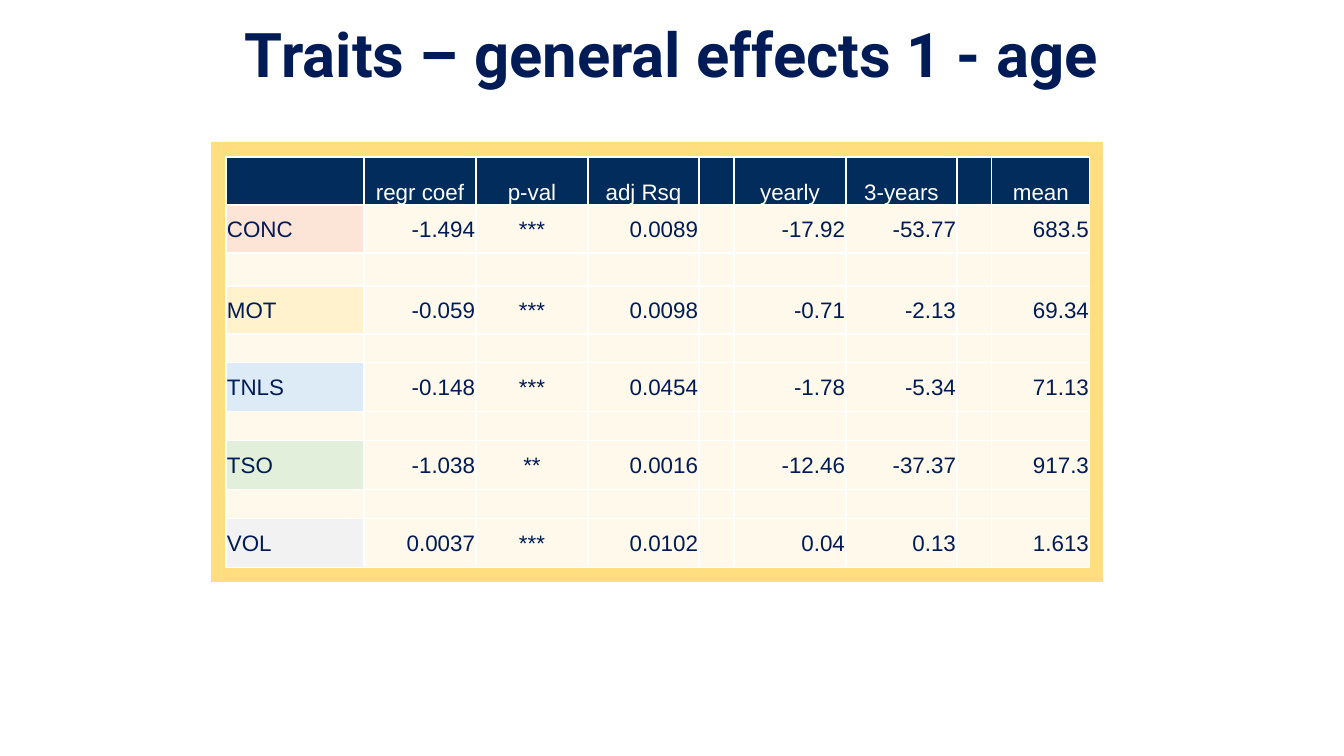
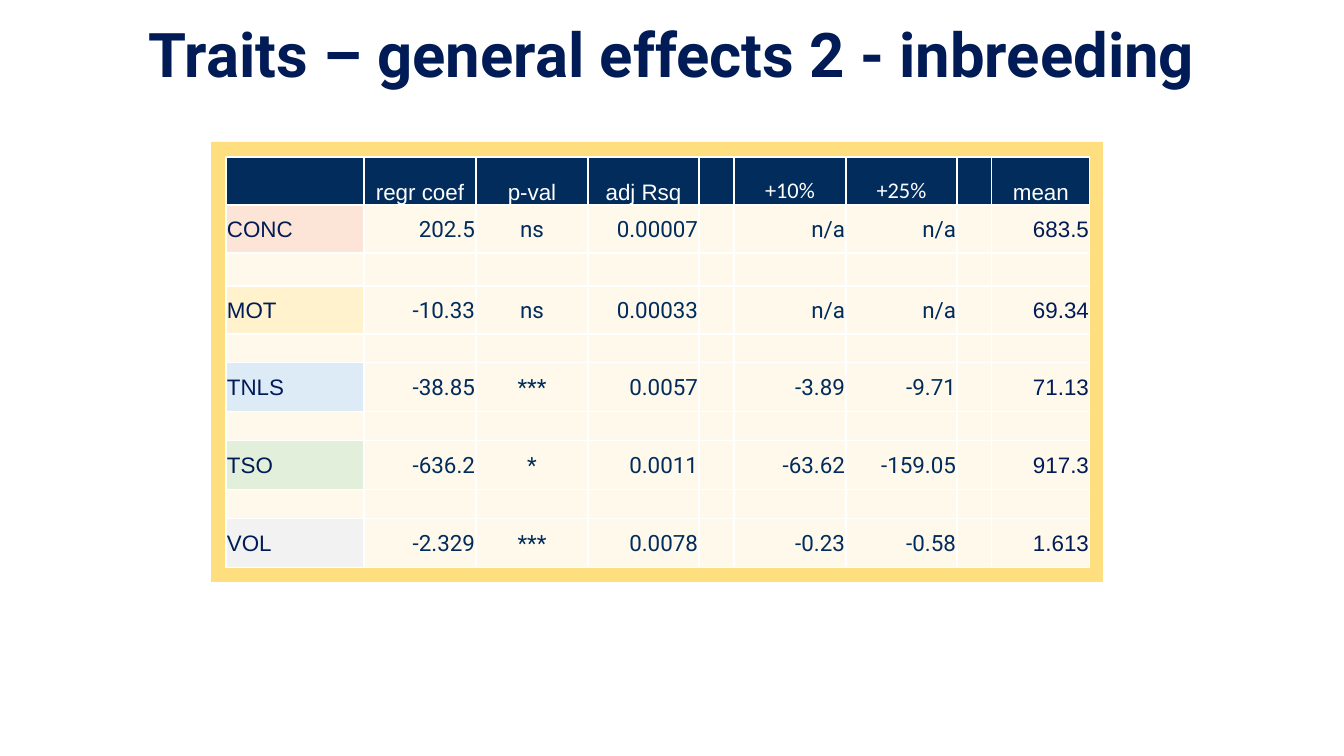
from lxml.etree import SubElement
from pptx import Presentation
from pptx.dml.color import RGBColor
from pptx.enum.shapes import MSO_SHAPE
from pptx.enum.text import MSO_ANCHOR, PP_ALIGN
from pptx.oxml.ns import qn
from pptx.util import Emu, Pt

WHITE = RGBColor(0xFE, 0xFF, 0xFE)
TITLE_NAVY = RGBColor(0x00, 0x1B, 0x56)
TEXT_NAVY = RGBColor(0x01, 0x1B, 0x56)
HEADER_NAVY = RGBColor(0x01, 0x2C, 0x5C)
YELLOW = RGBColor(0xFF, 0xDE, 0x7F)
CREAM = RGBColor(0xFF, 0xF9, 0xEC)
TRAIT_FILLS = {
    "CONC": RGBColor(0xFC, 0xE4, 0xD6),
    "MOT": RGBColor(0xFF, 0xF2, 0xCC),
    "TNLS": RGBColor(0xDD, 0xEB, 0xF7),
    "TSO": RGBColor(0xE2, 0xEF, 0xDA),
    "VOL": RGBColor(0xF2, 0xF2, 0xF2),
}
MEANS = ["683.5", "69.34", "71.13", "917.3", "1.613"]

COLUMN_WIDTHS = [138, 112, 112, 111, 35, 112, 111, 35, 98]
ROW_HEIGHTS = [48, 48, 33, 48, 29, 49, 29, 49, 29, 49]
P_VALUE_COLUMN = 2
EFFECT_COLUMNS = (5, 6)
MEAN_COLUMN = 8

AGE_EFFECTS = [
    ["-1.494", "***", "0.0089", "-17.92", "-53.77"],
    ["-0.059", "***", "0.0098", "-0.71", "-2.13"],
    ["-0.148", "***", "0.0454", "-1.78", "-5.34"],
    ["-1.038", "**", "0.0016", "-12.46", "-37.37"],
    ["0.0037", "***", "0.0102", "0.04", "0.13"],
]
INBREEDING_EFFECTS = [
    ["202.5", "ns", "0.00007", "n/a", "n/a"],
    ["-10.33", "ns", "0.00033", "n/a", "n/a"],
    ["-38.85", "***", "0.0057", "-3.89", "-9.71"],
    ["-636.2", "*", "0.0011", "-63.62", "-159.05"],
    ["-2.329", "***", "0.0078", "-0.23", "-0.58"],
]


def px(count):
    """Turn pixels into EMU."""
    return Emu(round(count * 914400 / 100.8))


def style_font(font, name, size, color, bold=False):
    """Set the look of a font."""
    font.name = name
    font.size = Pt(size)
    font.color.rgb = color
    font.bold = bold


def add_title(page, text):
    """Add the centred title across the top of the page."""
    box = page.shapes.add_textbox(px(0), px(0), px(1344), px(119))
    frame = box.text_frame
    frame.word_wrap = True
    frame.vertical_anchor = MSO_ANCHOR.MIDDLE
    frame.margin_left = frame.margin_right = frame.margin_top = frame.margin_bottom = 0
    frame.text = text
    para = frame.paragraphs[0]
    para.alignment = PP_ALIGN.CENTER
    para.line_spacing = 0.8
    style_font(para.runs[0].font, "Roboto", 44, TITLE_NAVY, bold=True)


def add_frame(page):
    """Add the yellow panel behind the table."""
    panel = page.shapes.add_shape(MSO_SHAPE.RECTANGLE, px(211), px(142), px(892), px(440))
    panel.shadow.inherit = False
    panel.fill.solid()
    panel.fill.fore_color.rgb = YELLOW
    panel.line.fill.background()


def add_borders(cell):
    """Draw a thin white line on each side of a cell."""
    properties = cell._tc.get_or_add_tcPr()
    for side in ("lnL", "lnR", "lnT", "lnB"):
        line = SubElement(properties, qn(f"a:{side}"), w=str(Pt(1)))
        fill = SubElement(line, qn("a:solidFill"))
        SubElement(fill, qn("a:srgbClr"), val=str(WHITE))


def fill_cell(cell, text, fill, alignment, anchor, font_name, color):
    """Give a cell its borders, fill and text."""
    add_borders(cell)
    cell.fill.solid()
    cell.fill.fore_color.rgb = fill
    cell.margin_left = cell.margin_right = cell.margin_top = px(1)
    cell.margin_bottom = 0
    cell.vertical_anchor = anchor
    para = cell.text_frame.paragraphs[0]
    if text:
        para.text = text
        para.alignment = alignment
        style_font(para.runs[0].font, font_name, 16, color)
    else:
        SubElement(para._p, qn("a:endParaRPr"), sz="1200")


def fill_header(cell, text, column, effect_font):
    """Fill one cell of the header row."""
    font_name = effect_font if column in EFFECT_COLUMNS else "Arial"
    fill_cell(cell, text, HEADER_NAVY, PP_ALIGN.CENTER, MSO_ANCHOR.BOTTOM, font_name, WHITE)


def fill_body(cell, text, column, value_font, value_color):
    """Fill one cell below the header row."""
    alignment = {0: PP_ALIGN.LEFT, P_VALUE_COLUMN: PP_ALIGN.CENTER}.get(column, PP_ALIGN.RIGHT)
    fill = TRAIT_FILLS.get(text, CREAM)
    is_value = 0 < column < MEAN_COLUMN
    font_name = value_font if is_value else "Arial"
    color = value_color if is_value else TEXT_NAVY
    fill_cell(cell, text, fill, alignment, MSO_ANCHOR.MIDDLE, font_name, color)


def table_row(label, values, mean):
    """Lay out one row with its two gap columns."""
    return [label, *values[:3], "", *values[3:], "", mean]


def table_rows(effects):
    """List the body rows, with a gap row between traits."""
    rows = []
    for trait, values, mean in zip(TRAIT_FILLS, effects, MEANS):
        rows += [table_row(trait, values, mean), [""] * len(COLUMN_WIDTHS)]
    return rows[:-1]


def add_effects_table(page, effect_names, effects, effect_font, value_font, value_color):
    """Add the table of trait effects."""
    table = page.shapes.add_table(
        len(ROW_HEIGHTS), len(COLUMN_WIDTHS), px(226), px(157),
        px(sum(COLUMN_WIDTHS)), px(sum(ROW_HEIGHTS))).table
    table.first_row = table.horz_banding = False
    for column, width in zip(table.columns, COLUMN_WIDTHS):
        column.width = px(width)
    for row, height in zip(table.rows, ROW_HEIGHTS):
        row.height = px(height)
    header = table_row("", ["regr coef", "p-val", "adj Rsq", *effect_names], "mean")
    for column, text in enumerate(header):
        fill_header(table.cell(0, column), text, column, effect_font)
    for row, texts in enumerate(table_rows(effects), start=1):
        for column, text in enumerate(texts):
            fill_body(table.cell(row, column), text, column, value_font, value_color)


def add_effects_page(deck, title, *table_content):
    """Add one page with a title and a framed table."""
    page = deck.slides.add_slide(deck.slide_layouts[6])
    page.background.fill.solid()
    page.background.fill.fore_color.rgb = WHITE
    add_title(page, title)
    add_frame(page)
    add_effects_table(page, *table_content)


def main():
    """Build and save the deck."""
    deck = Presentation()
    deck.slide_width, deck.slide_height = px(1344), px(756)
    add_effects_page(deck, "Traits – general effects 1 - age",
                     ["yearly", "3-years"], AGE_EFFECTS, "Arial", "Arial", TEXT_NAVY)
    add_effects_page(deck, "Traits – general effects 2 - inbreeding",
                     ["+10%", "+25%"], INBREEDING_EFFECTS, "Calibri", "Roboto", HEADER_NAVY)
    deck.save("out.pptx")


if __name__ == "__main__":
    main()
